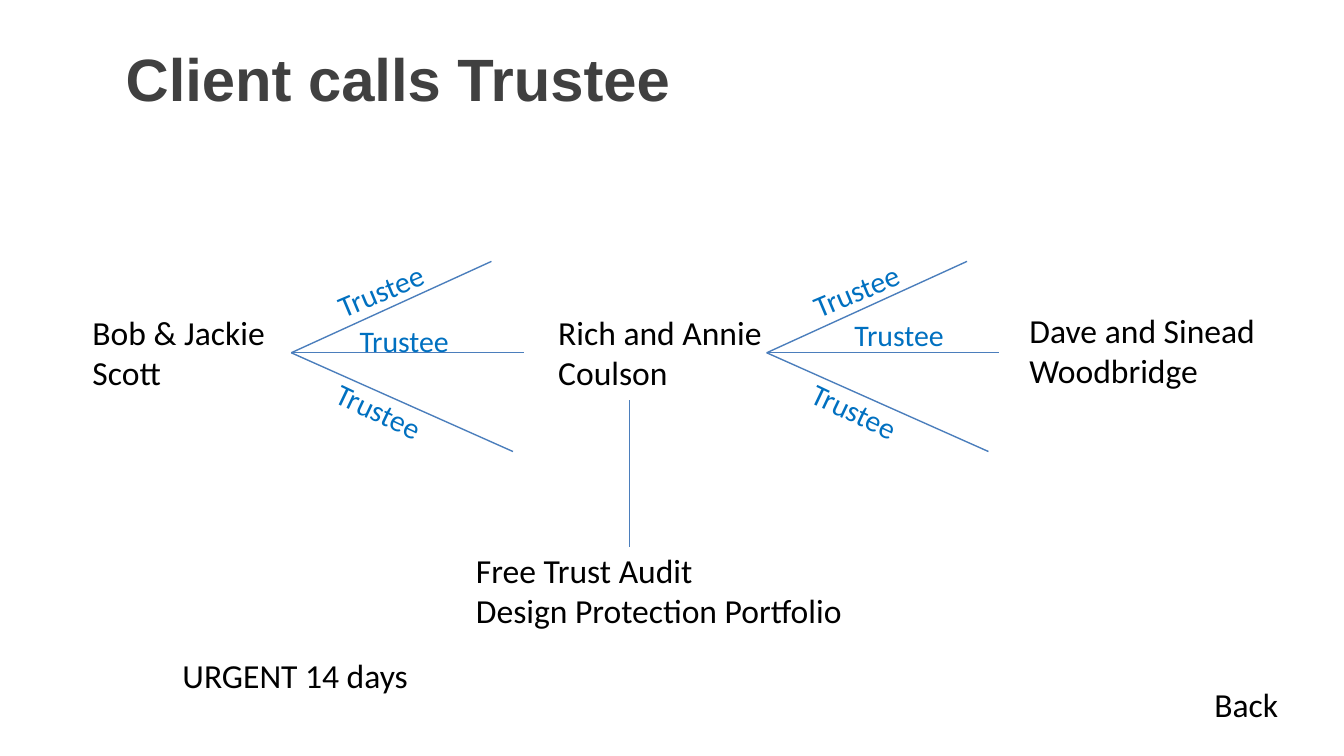
from dataclasses import dataclass

from lxml.etree import SubElement
from pptx import Presentation
from pptx.dml.color import RGBColor
from pptx.enum.shapes import MSO_CONNECTOR as Connector
from pptx.enum.text import MSO_ANCHOR as Anchor, MSO_AUTO_SIZE as AutoSize, PP_ALIGN as Align
from pptx.oxml.ns import qn
from pptx.util import Inches, Pt


@dataclass(frozen=True)
class Theme:
    heading_font: str = "Arial"
    body_font: str = "Calibri"
    heading: str = "404040"
    body: str = "000000"
    trustee: str = "0070C0"
    line: str = "4B7EBC"
    heading_size: float = 32
    body_size: float = 18
    trustee_size: float = 16
    line_width: float = 0.75


class TrusteeSlide:
    """Places elements on a grid of 0.1 inch cells, 100 columns wide."""

    def __init__(self, prs, theme):
        self.theme = theme
        self.slide = prs.slides.add_slide(prs.slide_layouts[5])

    @staticmethod
    def grid(*cells):
        return [Inches(cell / 10) for cell in cells]

    @staticmethod
    def style(paragraph, name, size, color, bold=False):
        paragraph.alignment = Align.LEFT
        font = paragraph.font
        font.name, font.size, font.bold = name, Pt(size), bold
        font.color.rgb = RGBColor.from_string(color)

    def title(self, text, col, row, cols, rows):
        heading = self.slide.shapes.title
        heading.left, heading.top, heading.width, heading.height = self.grid(col, row, cols, rows)
        frame = heading.text_frame
        frame.text = text
        frame.auto_size = AutoSize.NONE
        frame.vertical_anchor = Anchor.TOP
        frame.margin_left, frame.margin_top = self.grid(4.25, 0.5)
        t = self.theme
        self.style(frame.paragraphs[0], t.heading_font, t.heading_size, t.heading, bold=True)

    def text(self, lines, col, row, cols, rows, size=None, color=None, rotation=0):
        box = self.slide.shapes.add_textbox(*self.grid(col, row, cols, rows))
        box.rotation = rotation
        frame = box.text_frame
        frame.word_wrap = True
        frame.auto_size = AutoSize.SHAPE_TO_FIT_TEXT
        frame.text = lines
        t = self.theme
        for paragraph in frame.paragraphs:
            self.style(paragraph, t.body_font, size or t.body_size, color or t.body)

    def line(self, col, row, end_col, end_row):
        connector = self.slide.shapes.add_connector(
            Connector.STRAIGHT, *self.grid(col, row, end_col, end_row))
        connector.line.color.rgb = RGBColor.from_string(self.theme.line)
        connector.line.width = Pt(self.theme.line_width)
        SubElement(connector.element.spPr, qn("a:effectLst"))

    def trustee_fan(self, col, row, middle_label):
        """Three labelled lines spreading from one point; middle_label is an offset."""
        t = self.theme
        branches = [
            ((14.9, -6.8), (2.1, -7.7), 337.2),
            ((17.3, 0), middle_label, 0),
            ((16.5, 7.35), (1.9, 3.85), 25.4),
        ]
        for (end_x, end_y), (label_x, label_y), rotation in branches:
            self.line(col, row, col + end_x, row + end_y)
            self.text("Trustee", col + label_x, row + label_y, 15, 3.7,
                      t.trustee_size, t.trustee, rotation)


def main():
    prs = Presentation()
    prs.slide_width = Inches(10)
    prs.slide_height = prs.slide_width * 9 // 16
    page = TrusteeSlide(prs, Theme())
    page.title("Client calls Trustee", 5.1, 2.6, 54.3, 2.5)

    couples = [
        ("Bob & Jackie\nScott", 5.9, 22.7),
        ("Rich and Annie\nCoulson", 40.55, 22.7),
        ("Dave and Sinead\nWoodbridge", 75.62, 22.57),
    ]
    for couple, col, row in couples:
        page.text(couple, col, row, 24.4, 7.1)

    page.trustee_fan(21.67, 26.25, middle_label=(4.1, -2.75))
    page.trustee_fan(57.05, 26.25, middle_label=(5.55, -3.15))

    page.line(46.85, 29.8, 46.85, 40.7)
    page.text("Free Trust Audit\nDesign Protection Portfolio", 34.43, 40.4, 29.5, 7.1)
    page.text("URGENT 14 days", 12.6, 48.23, 19.7, 4)
    page.text("Back", 89.37, 50.4, 10.2, 4)
    prs.save("out.pptx")


if __name__ == "__main__":
    main()
